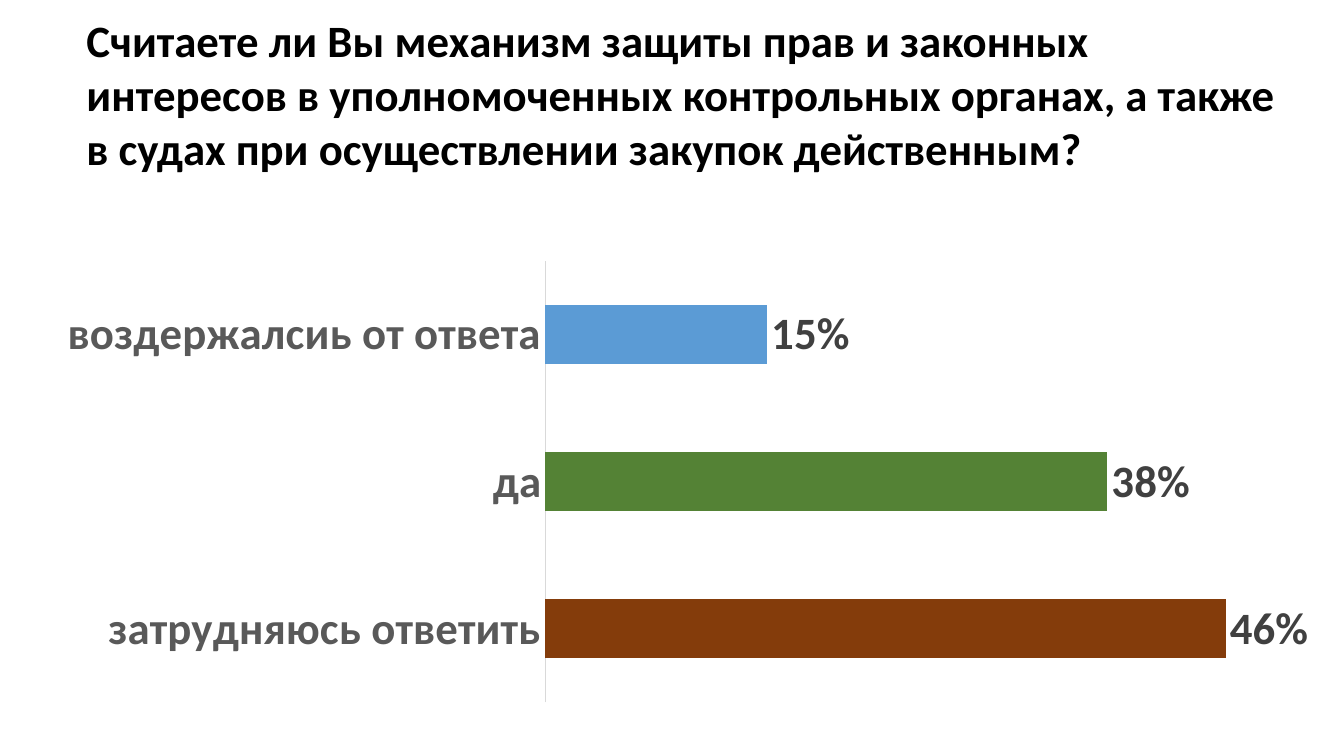
from pptx import Presentation
from pptx.chart.data import CategoryChartData
from pptx.dml.color import RGBColor
from pptx.enum import chart as charts, text
from pptx.util import Pt

QUESTION = ("Считаете ли Вы механизм защиты прав и законных интересов "
            "в уполномоченных контрольных органах, а также в судах "
            "при осуществлении закупок действенным?")
ANSWERS = [
    ("затрудняюсь ответить", 0.46, "843C0B"),
    ("да", 0.38, "548235"),
    ("воздержалсиь от ответа", 0.15, "5B9BD5"),
]


def paint(color_format, color):
    color_format.rgb = RGBColor.from_string(color)


def style_font(font, color):
    font.name = "Calibri"
    font.size = Pt(32)
    font.bold = True
    paint(font.color, color)


def add_question(slide, left, top, width, height):
    question = slide.shapes.add_textbox(Pt(left), Pt(top), Pt(width), Pt(height)).text_frame
    question.word_wrap = True
    question.auto_size = text.MSO_AUTO_SIZE.SHAPE_TO_FIT_TEXT
    question.text = QUESTION
    style_font(question.paragraphs[0].font, "000000")


def add_answers(slide, left, top, width, height):
    names, shares, colors = zip(*ANSWERS)
    poll = CategoryChartData(number_format="0%")
    poll.categories = names
    poll.add_series("Series 1", shares)
    chart = slide.shapes.add_chart(
        charts.XL_CHART_TYPE.BAR_CLUSTERED,
        Pt(left), Pt(top), Pt(width), Pt(height), poll).chart
    chart.has_legend = False
    chart.has_title = False
    style_font(chart.font, "000000")

    answer_axis = chart.category_axis
    answer_axis.major_tick_mark = charts.XL_TICK_MARK.NONE
    answer_axis.format.line.width = Pt(0.75)
    paint(answer_axis.format.line.color, "D9D9D9")
    style_font(answer_axis.tick_labels.font, "595959")

    share_axis = chart.value_axis
    share_axis.visible = False
    share_axis.has_major_gridlines = False
    share_axis.minimum_scale = 0
    share_axis.tick_labels.number_format = "0%"
    share_axis.tick_labels.number_format_is_linked = False

    plot = chart.plots[0]
    plot.gap_width = 150
    plot.overlap = -25
    plot.vary_by_categories = False
    bars = plot.series[0]
    for index, color in enumerate(colors):
        fill = bars.points[index].format.fill
        fill.solid()
        paint(fill.fore_color, color)

    labels = bars.data_labels
    labels.show_value = True
    labels.number_format = "0%"
    labels.number_format_is_linked = False
    labels.position = charts.XL_LABEL_POSITION.OUTSIDE_END
    style_font(labels.font, "404040")


def main():
    deck = Presentation()
    deck.slide_width, deck.slide_height = Pt(960), Pt(540)
    slide = deck.slides.add_slide(deck.slide_layouts[6])
    add_question(slide, 54.7, 5.8, 881.3, 123.8)
    add_answers(slide, 30.2, 180, 905.8, 328.3)
    deck.save("out.pptx")


if __name__ == "__main__":
    main()
